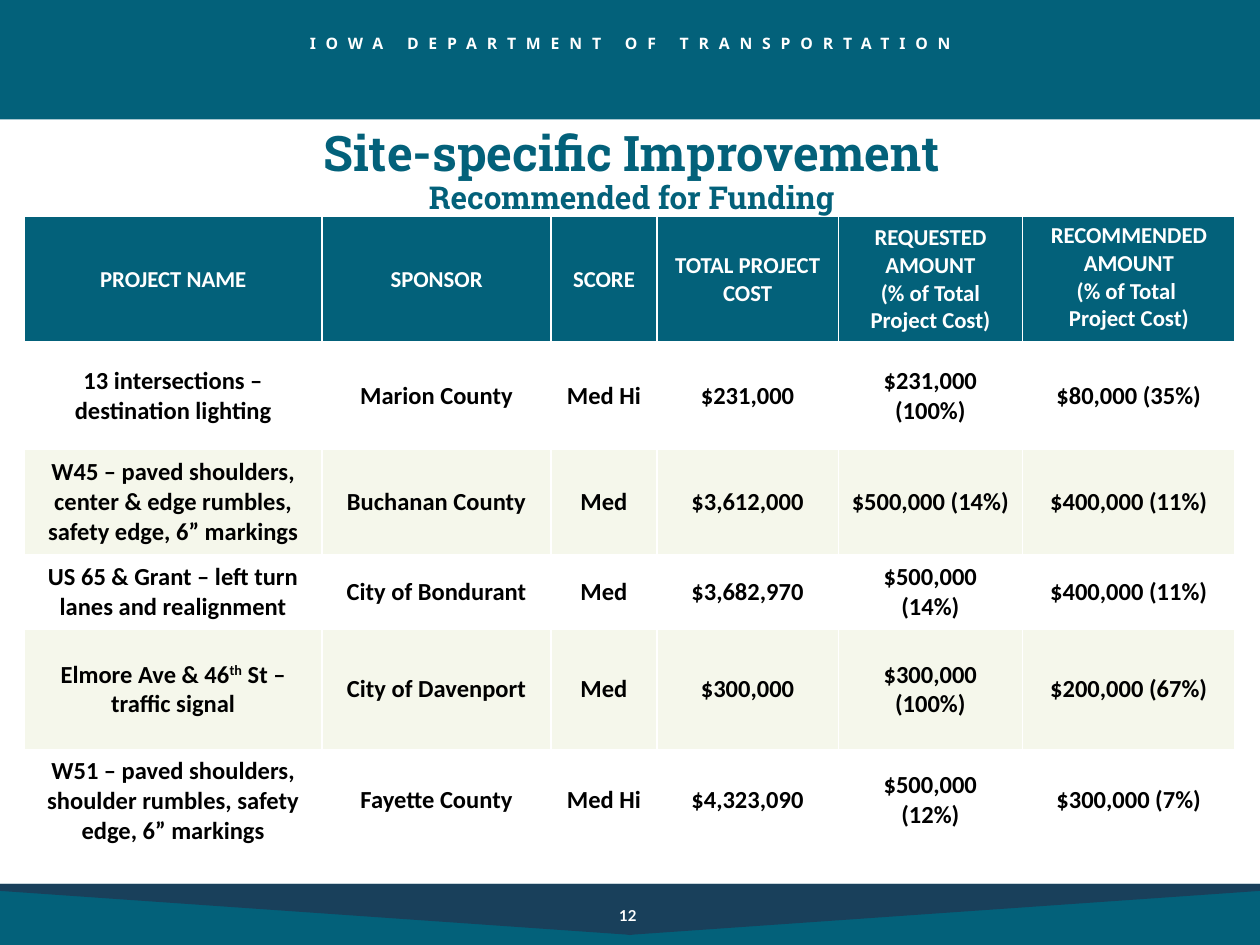
from lxml.etree import SubElement
from pptx import Presentation
from pptx.dml.color import RGBColor
from pptx.enum.shapes import MSO_SHAPE as Shape
from pptx.enum.text import MSO_ANCHOR as Anchor, PP_ALIGN as Align
from pptx.oxml.ns import qn
from pptx.util import Cm, Pt

TEAL = RGBColor(0x03, 0x61, 0x7A)
NAVY = RGBColor(0x19, 0x40, 0x5B)
CREAM = RGBColor(0xF5, 0xF7, 0xEB)
WHITE = RGBColor(0xFF, 0xFF, 0xFF)
BLACK = RGBColor(0x00, 0x00, 0x00)

AGENCY = {"name": "Noto Sans", "size": Pt(9), "bold": True}
NUMBER = {"name": "Lato", "size": Pt(8.6), "bold": True}
TITLE = {"name": "Roboto Slab", "size": Pt(28), "bold": True}
SUBTITLE = TITLE | {"size": Pt(18)}
HEADING = {"name": "Calibri", "size": Pt(13), "bold": True}
BODY = HEADING | {"size": Pt(14)}

COLUMNS = [6, 4.62, 2.13, 3.66, 3.71, 4.29]
ROWS = [2.57, 2.13, 2.13, 1.5, 2.44, 2.01]
PROJECTS = [
    ["PROJECT NAME", "SPONSOR", "SCORE", "TOTAL PROJECT COST",
     "REQUESTED AMOUNT\n(% of Total Project Cost)",
     "RECOMMENDED AMOUNT\n(% of Total \vProject Cost)"],
    ["13 intersections – destination lighting", "Marion County", "Med Hi",
     "$231,000", "$231,000\n(100%)", "$80,000 (35%)"],
    ["W45 – paved shoulders, center & edge rumbles, safety edge, 6” markings",
     "Buchanan County", "Med", "$3,612,000", "$500,000 (14%)", "$400,000 (11%)"],
    ["US 65 & Grant – left turn lanes and realignment", "City of Bondurant",
     "Med", "$3,682,970", "$500,000\n(14%)", "$400,000 (11%)"],
    ["Elmore Ave & 46^th^ St – traffic signal", "City of Davenport", "Med",
     "$300,000", "$300,000\n(100%)", "$200,000 (67%)"],
    ["W51 – paved shoulders, shoulder rumbles, safety edge, 6” markings",
     "Fayette County", "Med Hi", "$4,323,090", "$500,000\n(12%)", "$300,000 (7%)"],
]


class FundingPage:
    """Hold the deck style and the current page, and draw elements on it."""

    def __init__(self):
        self.deck = Presentation()
        self.deck.slide_width, self.deck.slide_height = Cm(25.4), Cm(19.05)
        self.page = self.deck.slides.add_slide(self.deck.slide_layouts[6])

    def paint(self, shape, color):
        shape.shadow.inherit = False
        shape.fill.solid()
        shape.fill.fore_color.rgb = color
        shape.line.fill.background()

    def band(self, top, height):
        shape = self.page.shapes.add_shape(
            Shape.RECTANGLE, Cm(0), Cm(top), self.deck.slide_width, Cm(height))
        self.paint(shape, TEAL)

    def outline(self, points, color):
        corners = [(Cm(x), Cm(y)) for x, y in points]
        builder = self.page.shapes.build_freeform(*corners[0])
        builder.add_line_segments(corners[1:], close=True)
        self.paint(builder.convert_to_shape(), color)

    def fill_text(self, frame, lines, color, spacing=None):
        for index, (line, style) in enumerate(lines):
            para = frame.paragraphs[0] if index == 0 else frame.add_paragraph()
            para.alignment = Align.CENTER
            para.line_spacing = spacing
            for row, part in enumerate(line.split("\v")):
                if row:
                    para.add_line_break()
                for piece, text in enumerate(part.split("^")):
                    span = para.add_run()
                    span.text = text
                    for key, value in style.items():
                        setattr(span.font, key, value)
                    span.font.color.rgb = color
                    if piece % 2:
                        span.font._element.set("baseline", "30000")
            for gap in para._p.findall(qn("a:br")):
                SubElement(gap, qn("a:rPr"), sz=str(int(style["size"].pt * 100)))

    def label(self, place, lines, color, anchor=Anchor.MIDDLE, spacing=None, tracking=0):
        box = self.page.shapes.add_textbox(*map(Cm, place))
        frame = box.text_frame
        frame.word_wrap = True
        frame.vertical_anchor = anchor
        self.fill_text(frame, lines, color, spacing)
        if tracking:
            for span in frame.paragraphs[0].runs:
                span.font._element.set("spc", str(tracking))

    def border(self, cell, widths):
        for side, width in widths.items():
            edge = SubElement(cell._tc.get_or_add_tcPr(), qn(f"a:ln{side}"), w=str(int(Pt(width))))
            SubElement(SubElement(edge, qn("a:solidFill")), qn("a:srgbClr"), val=str(WHITE))

    def table(self, left, top, columns, rows, records):
        grid = self.page.shapes.add_table(
            len(rows), len(columns), Cm(left), Cm(top), Cm(sum(columns)), Cm(sum(rows))).table
        for column, width in zip(grid.columns, columns):
            column.width = Cm(width)
        for index, (row, height, record) in enumerate(zip(grid.rows, rows, records)):
            row.height = Cm(height)
            header = index == 0
            style, color = (HEADING, WHITE) if header else (BODY, BLACK)
            for cell, text in zip(row.cells, record):
                self.border(cell, {"L": 1, "R": 1, "T": 3 if index == 1 else 1,
                                   "B": 3 if header else 1})
                if index % 2:
                    cell.fill.background()
                else:
                    cell.fill.solid()
                    cell.fill.fore_color.rgb = TEAL if header else CREAM
                cell.vertical_anchor = Anchor.TOP if "\v" in text else Anchor.MIDDLE
                lines = [(line, style) for line in text.split("\n")]
                self.fill_text(cell.text_frame, lines, color)


def main():
    slide = FundingPage()
    slide.band(0, 2.41)
    slide.band(17.82, 1.23)
    slide.outline([(0, 17.82), (25.4, 17.82), (25.4, 17.96), (12.78, 18.84),
                   (12.7, 18.85), (12.62, 18.84), (0, 17.96)], NAVY)
    slide.label((0, 0.56, 25.4, 0.64), [("IOWA DEPARTMENT OF TRANSPORTATION", AGENCY)],
                WHITE, Anchor.TOP, tracking=560)
    slide.label((9.8, 18.16, 5.72, 0.58), [("12", NUMBER)], WHITE)
    slide.table(0.49, 4.35, COLUMNS, ROWS, PROJECTS)
    slide.label((0.58, 2.82, 24.31, 1.32),
                [("Site-specific Improvement", TITLE), ("Recommended for Funding", SUBTITLE)],
                TEAL, spacing=0.9)
    slide.deck.save("out.pptx")


if __name__ == "__main__":
    main()
